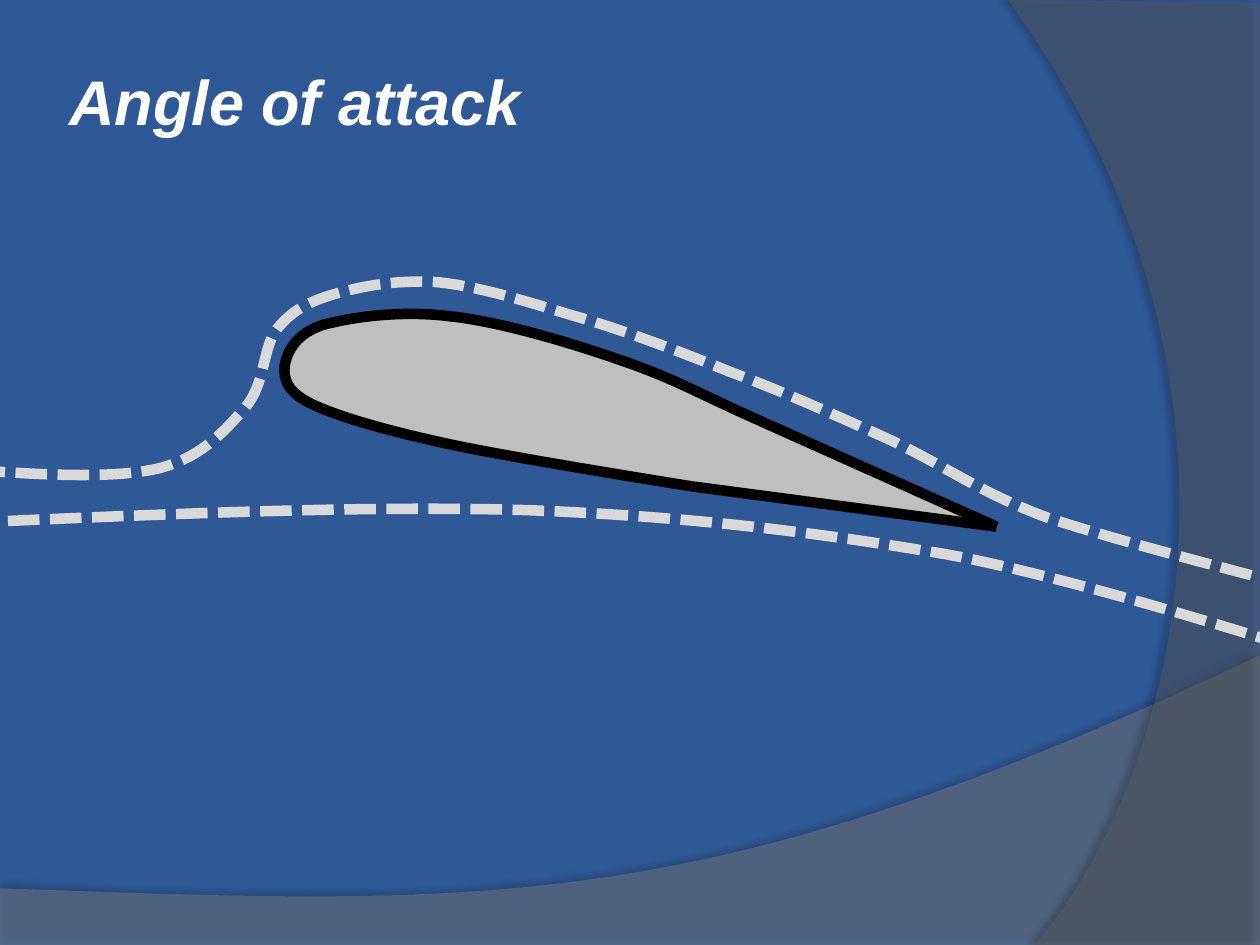
from dataclasses import dataclass

from lxml.etree import SubElement
from pptx import Presentation
from pptx.dml.color import RGBColor
from pptx.enum.dml import MSO_LINE
from pptx.enum.shapes import MSO_CONNECTOR, MSO_SHAPE
from pptx.enum.text import MSO_ANCHOR
from pptx.oxml.ns import qn
from pptx.util import Inches, Pt


@dataclass(frozen=True)
class Theme:
    background: RGBColor = RGBColor(0x2F, 0x58, 0x97)
    ground: RGBColor = RGBColor(0x7F, 0x7F, 0x7F)
    side: RGBColor = RGBColor(0x5E, 0x5E, 0x5E)
    wing: RGBColor = RGBColor(0xBF, 0xBF, 0xBF)
    outline: RGBColor = RGBColor(0, 0, 0)
    airflow: RGBColor = RGBColor(0xD9, 0xD9, 0xD9)
    text: RGBColor = RGBColor(0xFF, 0xFF, 0xFF)
    font: str = "Arial"
    title_size: int = Pt(36)
    stroke: int = Pt(6)


theme = Theme()


def add_path(start, segments, fill=None, line=None):
    """Draw a path in inches: two numbers are a line, six a Bezier curve.

    A filled path is closed, a stroked one stays open.
    """
    points = [(Inches(x), Inches(y))
              for seg in segments for x, y in zip(seg[::2], seg[1::2])]
    builder = slide.shapes.build_freeform(Inches(start[0]), Inches(start[1]))
    builder.add_line_segments(points, close=fill is not None)
    sp = builder.convert_to_shape()
    sp.shadow.inherit = False

    # Merge the three points of each curve into one Bezier command
    steps = iter(sp._element.findall(".//" + qn("a:lnTo")))
    for seg in segments:
        step = next(steps)
        if len(seg) == 6:
            curve = step.makeelement(qn("a:cubicBezTo"))
            step.addprevious(curve)
            for old in (step, next(steps), next(steps)):
                curve.append(old[0])
                old.getparent().remove(old)

    if fill is None:
        sp.fill.background()
        sp.line.color.rgb = line
        sp.line.width = theme.stroke
    else:
        sp.fill.solid()
        sp.fill.fore_color.rgb = fill
        sp.line.fill.background()
    return sp


prs = Presentation()
prs.slide_width, prs.slide_height = Inches(10), Inches(7.5)
slide = prs.slides.add_slide(prs.slide_layouts[6])
slide.background.fill.solid()
slide.background.fill.fore_color.rgb = theme.background

# Translucent backdrop: start, segments, colour, opacity, shadow
# (opacity in percent, distance in points, direction in degrees)
backdrop = [
    ((0, 7.05), [(0, 7.51), (10, 7.51), (10, 5.2),
                 (5.59, 7.29, 3.91, 7.19, 0, 7.05)],
     theme.ground, 45, (35, 3.5, 270)),
    ((10, 0.02), [(10, 7.5), (8.21, 7.5),
                  (9.35, 6.19, 10.18, 3, 8, 0), (10, 0.02)],
     theme.side, 40, (45, 4, 180)),
]
for start, segments, color, opacity, (strength, distance, angle) in backdrop:
    sp = add_path(start, segments, fill=color)
    srgb = sp._element.spPr.find(qn("a:solidFill"))[0]
    SubElement(srgb, qn("a:alpha"), val=str(opacity * 1000))
    effects = sp._element.spPr.find(qn("a:effectLst"))
    shadow = SubElement(effects, qn("a:outerShdw"), blurRad=str(Pt(4)),
                        dist=str(Pt(distance)), dir=str(angle * 60000),
                        algn="ctr", rotWithShape="0")
    shadow_color = SubElement(shadow, qn("a:srgbClr"), val="000000")
    SubElement(shadow_color, qn("a:alpha"), val=str(strength * 1000))

# Wing section
nose = slide.shapes.add_shape(MSO_SHAPE.OVAL, Inches(2.29), Inches(2.79),
                              Inches(0.28), Inches(0.33))
nose.shadow.inherit = False
nose.fill.solid()
nose.fill.fore_color.rgb = theme.wing
nose.line.fill.background()

add_path((7.65, 4.11), [
    (7.79, 4.02, 6.19, 3.4, 5.68, 3.18),
    (5.18, 2.95, 4.95, 2.87, 4.6, 2.76),
    (4.25, 2.65, 3.88, 2.56, 3.57, 2.53),
    (3.27, 2.49, 2.99, 2.51, 2.79, 2.54),
    (2.58, 2.57, 2.44, 2.65, 2.36, 2.73),
    (2.28, 2.8, 2.29, 2.89, 2.32, 2.97),
    (2.35, 3.06, 2.41, 3.15, 2.55, 3.22),
    (2.7, 3.3, 3.18, 3.43, 3.18, 3.43),
    (4.84, 3.75),
    (5.59, 3.87, 7.51, 4.21, 7.65, 4.11),
], fill=theme.wing)

tail, underside = (7.91, 4.18), (5.49, 3.86)
add_path(tail, [
    (6.01, 3.33),
    (5.52, 3.11, 5.34, 3, 4.93, 2.86),
    (4.53, 2.72, 3.96, 2.55, 3.57, 2.51),
    (3.17, 2.46, 2.78, 2.52, 2.56, 2.58),
    (2.35, 2.65, 2.28, 2.79, 2.26, 2.9),
    (2.25, 3, 2.27, 3.11, 2.48, 3.21),
    (2.7, 3.31, 3.04, 3.41, 3.54, 3.52),
    (4.04, 3.63, 5.49, 3.86, *underside),
], line=theme.outline)

edge = slide.shapes.add_connector(
    MSO_CONNECTOR.STRAIGHT, *(Inches(v) for v in underside + tail))
edge.line.color.rgb = theme.outline
edge.line.width = theme.stroke
SubElement(edge._element.spPr, qn("a:effectLst"))

# Title
title = slide.shapes.add_textbox(Inches(0.5), Inches(0.17),
                                 Inches(8.17), Inches(1.25))
tf = title.text_frame
tf.word_wrap = True
tf.vertical_anchor = MSO_ANCHOR.MIDDLE
tf.margin_left = tf.margin_right = Inches(0.05)
tf.margin_top = tf.margin_bottom = Inches(0.05)
r = tf.paragraphs[0].add_run()
r.text = "Angle of attack"
r.font.name = theme.font
r.font.size = theme.title_size
r.font.bold = r.font.italic = True
r.font.color.rgb = theme.text

# Airflow above and below the wing
streamlines = [
    ((-0.21, 3.73), [
        (0.34, 3.77, 0.89, 3.8, 1.25, 3.72),
        (1.61, 3.63, 1.79, 3.41, 1.95, 3.23),
        (2.11, 3.04, 2.08, 2.76, 2.2, 2.61),
        (2.32, 2.46, 2.46, 2.39, 2.67, 2.33),
        (2.88, 2.27, 3.15, 2.22, 3.47, 2.24),
        (3.78, 2.27, 4.14, 2.38, 4.53, 2.5),
        (4.92, 2.61, 5.37, 2.78, 5.79, 2.95),
        (6.22, 3.11, 6.64, 3.3, 7.06, 3.49),
        (7.47, 3.68, 7.78, 3.91, 8.29, 4.1),
        (8.81, 4.28, 10.14, 4.62, 10.14, 4.62),
    ]),
    ((-0.27, 4.15), [
        (1.32, 4.08, 2.9, 4.01, 4.2, 4.05),
        (5.49, 4.1, 6.51, 4.23, 7.51, 4.4),
        (8.5, 4.58, 10.16, 5.11, 10.16, 5.11),
    ]),
]
for start, segments in streamlines:
    sp = add_path(start, segments, line=theme.airflow)
    sp.line.dash_style = MSO_LINE.SQUARE_DOT

prs.save("out.pptx")
